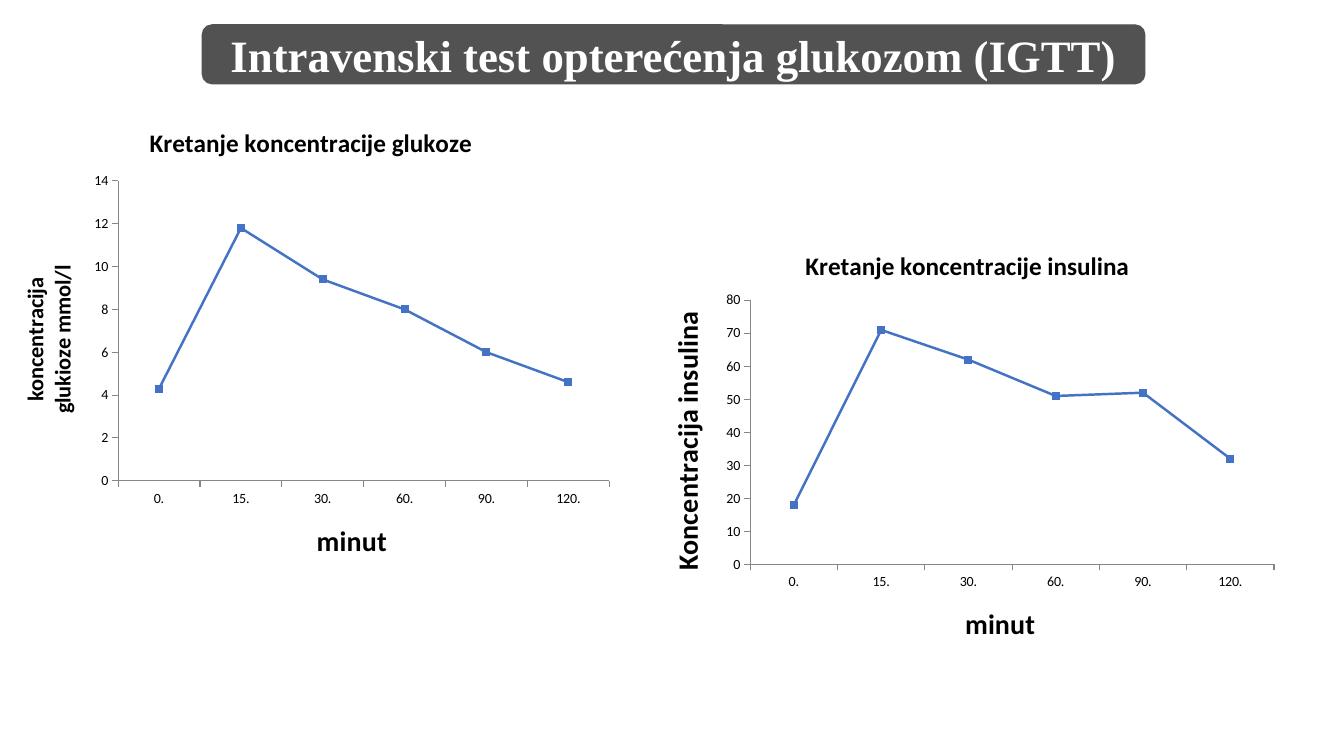
from lxml import etree
from pptx import Presentation
from pptx.chart.data import CategoryChartData
from pptx.dml.color import RGBColor
from pptx.enum.chart import XL_CHART_TYPE as ChartType, XL_MARKER_STYLE as Marker, XL_TICK_MARK as Tick
from pptx.enum.shapes import MSO_SHAPE as Preset
from pptx.enum.text import MSO_ANCHOR as Anchor, PP_ALIGN as Align
from pptx.oxml.ns import qn
from pptx.util import Cm, Pt

HEADING = "Intravenski test opterećenja glukozom (IGTT)"
MINUTES = ["0.", "15.", "30.", "60.", "90.", "120."]
CHARTS = [
    {"title": "Kretanje koncentracije glukoze",
     "value_title": "koncentracija\nglukioze mmol/l", "value_size": 16,
     "values": [4.3, 11.8, 9.4, 8, 6, 4.6], "maximum": 14, "step": 2,
     "box": (0, 2.67, 15.67, 11.81), "plot": (0.19, 0.16, 0.79, 0.64)},
    {"title": "Kretanje koncentracije insulina",
     "value_title": "Koncentracija insulina", "value_size": 20,
     "values": [18, 71, 62, 51, 52, 32], "maximum": 80, "step": 10,
     "box": (16.33, 5.79, 16.1, 11.1), "plot": (0.16, 0.16, 0.82, 0.6)},
]


def color(hex_string):
    return RGBColor.from_string(hex_string)


def style_font(font, size, hex_string="000000", bold=True, name="Calibri"):
    font.name, font.size, font.bold = name, Pt(size), bold
    font.color.rgb = color(hex_string)


def set_title(title, text, size):
    title.text_frame.text = text
    for paragraph in title.text_frame.paragraphs:
        for run in paragraph.runs:
            style_font(run.font, size)


def place_plot(chart, fractions):
    plot_area = chart.plots[0]._element.getparent()
    for old_layout in plot_area.findall(qn("c:layout")):
        plot_area.remove(old_layout)
    layout = etree.Element(qn("c:layout"))
    manual = etree.SubElement(layout, qn("c:manualLayout"))
    settings = [("layoutTarget", "inner"), ("xMode", "edge"), ("yMode", "edge")]
    for tag, value in settings + list(zip("xywh", fractions)):
        etree.SubElement(manual, qn(f"c:{tag}")).set("val", str(value))
    plot_area.insert(0, layout)


def add_heading(slide):
    shape = slide.shapes.add_shape(Preset.ROUNDED_RECTANGLE, Cm(5.1), Cm(0.63), Cm(23.75), Cm(1.48))
    shape.shadow.inherit = False
    shape.fill.solid()
    shape.fill.fore_color.rgb = color("525252")
    shape.line.color.rgb = color("525252")
    shape.line.width = Pt(1)
    shape.text_frame.text = HEADING
    shape.text_frame.word_wrap = True
    shape.text_frame.vertical_anchor = Anchor.MIDDLE
    paragraph = shape.text_frame.paragraphs[0]
    paragraph.alignment = Align.CENTER
    style_font(paragraph.runs[0].font, 32, "FFFFFF", name="Times New Roman")


def add_line_chart(slide, content):
    data = CategoryChartData()
    data.categories = MINUTES
    data.add_series("Series 1", content["values"])
    box = [Cm(length) for length in content["box"]]
    chart = slide.shapes.add_chart(ChartType.LINE_MARKERS, *box, data).chart
    style_font(chart.font, 10, bold=False)
    chart.has_legend = False
    chart.has_title = True
    set_title(chart.chart_title, content["title"], 18)
    chart.chart_title.include_in_layout = False

    value_axis, category_axis = chart.value_axis, chart.category_axis
    value_axis.minimum_scale = 0
    value_axis.maximum_scale = content["maximum"]
    value_axis.major_unit = content["step"]
    set_title(value_axis.axis_title, content["value_title"], content["value_size"])
    set_title(category_axis.axis_title, "minut", 20)
    for axis in (value_axis, category_axis):
        axis.has_major_gridlines = False
        axis.major_tick_mark = Tick.OUTSIDE
        axis.minor_tick_mark = Tick.NONE
        axis.format.line.color.rgb = color("868686")
        axis.format.line.width = Pt(0.75)

    chart.plots[0].vary_by_categories = False
    series = chart.plots[0].series[0]
    series.smooth = False
    series.format.line.color.rgb = color("4472C4")
    series.format.line.width = Pt(1.75)
    series.marker.style = Marker.SQUARE
    series.marker.size = 5
    series.marker.format.fill.solid()
    series.marker.format.fill.fore_color.rgb = color("4472C4")
    series.marker.format.line.color.rgb = color("4472C4")
    place_plot(chart, content["plot"])


def main():
    """Build the glucose tolerance slide with its two line charts."""
    presentation = Presentation()
    presentation.slide_width, presentation.slide_height = Cm(33.87), Cm(19.05)
    slide = presentation.slides.add_slide(presentation.slide_layouts[6])
    add_heading(slide)
    for content in CHARTS:
        add_line_chart(slide, content)
    presentation.save("out.pptx")


if __name__ == "__main__":
    main()
